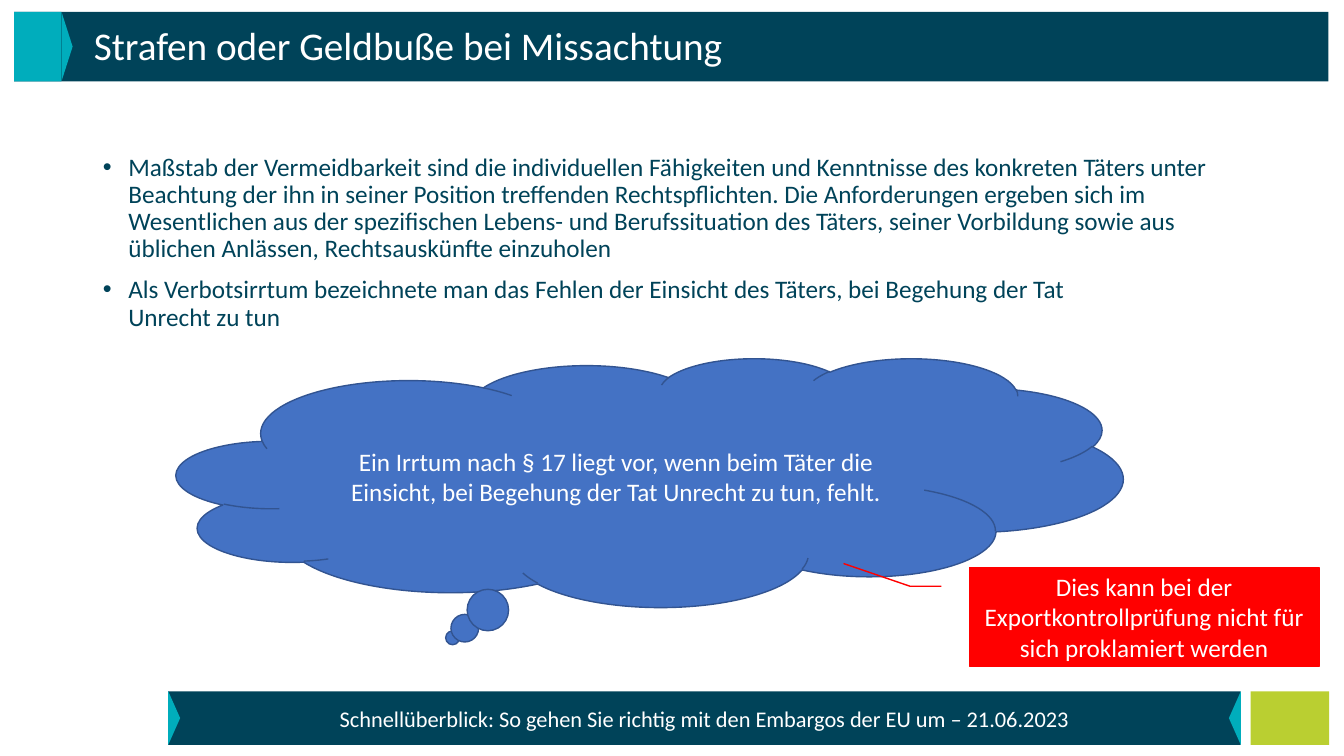
from pptx import Presentation
from pptx.dml.color import RGBColor
from pptx.enum.shapes import MSO_SHAPE
from pptx.enum.text import MSO_ANCHOR, MSO_AUTO_SIZE, PP_ALIGN
from pptx.util import Cm, Pt

RECTANGLE = MSO_SHAPE.RECTANGLE
TRIANGLE = MSO_SHAPE.ISOSCELES_TRIANGLE
CLOUD = MSO_SHAPE.CLOUD_CALLOUT
LINE_CALLOUT = MSO_SHAPE.LINE_CALLOUT_2
MIDDLE = MSO_ANCHOR.MIDDLE
LEFT, CENTER = PP_ALIGN.LEFT, PP_ALIGN.CENTER

WHITE = RGBColor(0xFF, 0xFF, 0xFF)
NAVY = RGBColor(0x00, 0x43, 0x59)
TEAL = RGBColor(0x00, 0xAD, 0xBC)
LIME = RGBColor(0xBA, 0xCF, 0x31)
BLUE = RGBColor(0x44, 0x72, 0xC4)
DARK_BLUE = RGBColor(0x32, 0x54, 0x91)
RED = RGBColor(0xFF, 0x00, 0x00)

# Content
TITLE = "Strafen oder Geldbuße bei Missachtung"
BULLETS = [
    "Maßstab der Vermeidbarkeit sind die individuellen Fähigkeiten und Kenntnisse "
    "des konkreten Täters unter Beachtung der ihn in seiner Position treffenden "
    "Rechtspflichten. Die Anforderungen ergeben sich im Wesentlichen aus der "
    "spezifischen Lebens- und Berufssituation des Täters, seiner Vorbildung sowie "
    "aus üblichen Anlässen, Rechtsauskünfte einzuholen",
    "Als Verbotsirrtum bezeichnete man das Fehlen der Einsicht des Täters, "
    "bei Begehung der Tat\nUnrecht zu tun",
]
CLOUD_TEXT = ("Ein Irrtum nach § 17 liegt vor, wenn beim Täter die Einsicht, "
              "bei Begehung der Tat Unrecht zu tun, fehlt.")
WARNING = "Dies kann bei der Exportkontrollprüfung nicht für sich proklamiert werden"
FOOTER = "Schnellüberblick: So gehen Sie richtig mit den Embargos der EU um – 21.06.2023"

# Left, top, width, height in centimetres
HEADER_BAR = (0.36, 0.3, 33.12, 1.75)
HEADER_TAB = (0.36, 0.3, 1.19, 1.75)
FOOTER_BAR = (4.24, 17.42, 27.03, 1.35)
FOOTER_TAB = (31.52, 17.42, 1.98, 1.35)
TITLE_AREA = (2.11, 0, 29.21, 2.39)
BODY_AREA = (2.34, 3.76, 29.21, 12.09)
CLOUD_AREA = (4.45, 9.02, 23.85, 6.27)
WARNING_AREA = (24.43, 14.3, 8.81, 2.49)
WARNING_POINTER = (0.19, -0.08, 0.19, -0.17, -0.04, -0.36)


def style(para, size, color, align):
    para.alignment = align
    para.font.size = Pt(size)
    para.font.name = "Calibri"
    para.font.color.rgb = color


def add_box(kind, area, fill, line=None, text="", size=18):
    box = page.shapes.add_shape(kind, *map(Cm, area))
    box.shadow.inherit = False
    box.fill.solid()
    box.fill.fore_color.rgb = fill
    if line is None:
        box.line.fill.background()
    else:
        box.line.color.rgb = line
        box.line.width = Pt(1)
    if text:
        box.text_frame.word_wrap = True
        box.text_frame.vertical_anchor = MIDDLE
        para = box.text_frame.paragraphs[0]
        para.text = text
        style(para, size, WHITE, CENTER)
    return box


def add_notch(left, depth, bar, rotation):
    """Triangle turned sideways, as tall as its bar."""
    top, height = bar[1], bar[3]
    area = (left + (depth - height) / 2, top + (height - depth) / 2, height, depth)
    add_box(TRIANGLE, area, TEAL).rotation = rotation


def place(holder, area):
    holder.left, holder.top, holder.width, holder.height = map(Cm, area)
    holder.text_frame.word_wrap = True
    holder.text_frame.auto_size = MSO_AUTO_SIZE.NONE
    tree = holder.element.getparent()
    tree.append(holder.element)  # bring in front of the bars


deck = Presentation()
deck.slide_width, deck.slide_height = Cm(33.87), Cm(19.05)
page = deck.slides.add_slide(deck.slide_layouts[1])

# Footer and header bars
add_box(RECTANGLE, FOOTER_TAB, LIME)
add_box(RECTANGLE, FOOTER_BAR, NAVY, text=FOOTER, size=16)
add_notch(FOOTER_BAR[0], 0.3, FOOTER_BAR, 90)
add_notch(FOOTER_BAR[0] + FOOTER_BAR[2] - 0.3, 0.3, FOOTER_BAR, 270)
add_box(RECTANGLE, HEADER_BAR, NAVY)
add_box(RECTANGLE, HEADER_TAB, TEAL)
add_notch(HEADER_TAB[0] + HEADER_TAB[2], 0.28, HEADER_BAR, 90)

# Title
title = page.shapes.title
place(title, TITLE_AREA)
title.text_frame.vertical_anchor = MIDDLE
heading = title.text_frame.paragraphs[0]
heading.text = TITLE
heading.line_spacing = 0.9
style(heading, 28, WHITE, LEFT)

# Bullet list
body = page.placeholders[1]
place(body, BODY_AREA)
frame = body.text_frame
for index, text in enumerate(BULLETS):
    para = frame.add_paragraph() if index else frame.paragraphs[0]
    para.text = text
    para.line_spacing = 0.9
    para.space_before = Pt(10 if index else 0)
    properties = para._p.get_or_add_pPr()
    properties.set("marL", str(Cm(0.64)))
    properties.set("indent", str(-Cm(0.64)))
    style(para, 18, NAVY, LEFT)

# Callouts
add_box(CLOUD, CLOUD_AREA, BLUE, DARK_BLUE, CLOUD_TEXT)
warning = add_box(LINE_CALLOUT, WARNING_AREA, RED, RED, WARNING)
for index, value in enumerate(WARNING_POINTER):
    warning.adjustments[index] = value

deck.save("out.pptx")
